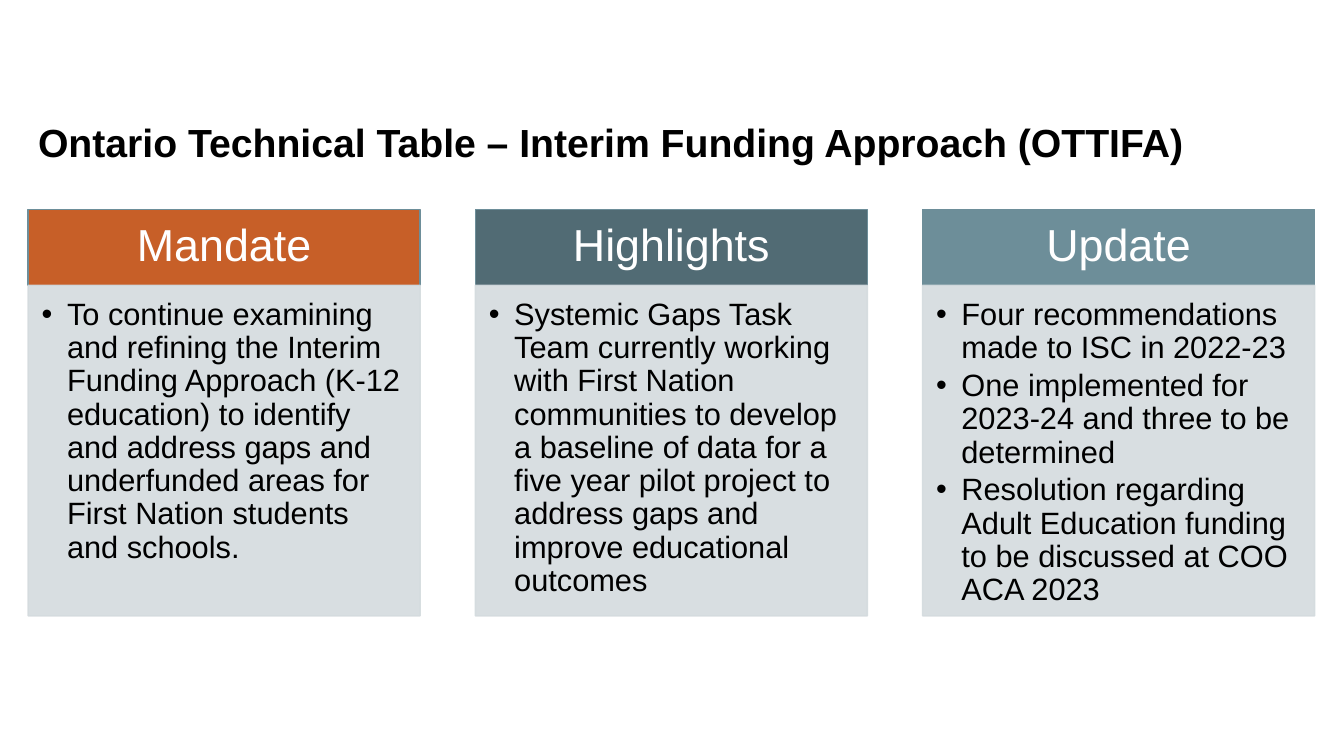
from dataclasses import dataclass

from lxml.etree import SubElement
from pptx import Presentation
from pptx.dml.color import RGBColor
from pptx.enum.shapes import MSO_SHAPE
from pptx.enum.text import MSO_ANCHOR, PP_ALIGN
from pptx.oxml.ns import qn
from pptx.util import Cm, Pt

# Grid, in centimetres
LEFT, STEP, WIDTH = 0.71, 11.27, 9.88
TOP, HEAD, BODY = 5.28, 1.91, 8.33

# Formats
TITLE_FONT = {"name": "Arial", "size": Pt(28), "bold": True}
HEAD_FONT = {"name": "Arial", "size": Pt(32), "bold": False}
BODY_FONT = {"name": "Arial", "size": Pt(22), "bold": False}
TITLE_PARA = {"line_spacing": 0.9, "alignment": PP_ALIGN.LEFT}
HEAD_PARA = {"line_spacing": 0.9, "alignment": PP_ALIGN.CENTER}
BODY_PARA = {**TITLE_PARA, "space_after": Pt(3.3)}
TITLE_FRAME = {"word_wrap": True, "vertical_anchor": MSO_ANCHOR.TOP}
HEAD_FRAME = {
    "word_wrap": True, "vertical_anchor": MSO_ANCHOR.MIDDLE,
    "margin_left": Cm(0.64), "margin_right": Cm(0.64),
    "margin_top": Cm(0.36), "margin_bottom": Cm(0.36),
}
BODY_FRAME = {
    "word_wrap": True, "vertical_anchor": MSO_ANCHOR.TOP,
    "margin_left": Cm(0.34), "margin_right": Cm(0.43),
    "margin_top": Cm(0.34), "margin_bottom": Cm(0.48),
}


@dataclass
class Column:
    head: str
    color: str
    points: list[str]


COLUMNS = [
    Column("Mandate", "C75F28", [
        "To continue examining and refining the Interim Funding Approach "
        "(K-12 education) to identify and address gaps and underfunded "
        "areas for First Nation students and schools.",
    ]),
    Column("Highlights", "516B74", [
        "Systemic Gaps Task Team currently working with First Nation "
        "communities to develop a baseline of data for a five year pilot "
        "project to address gaps and improve educational outcomes",
    ]),
    Column("Update", "6D8E99", [
        "Four recommendations made to ISC in 2022-23",
        "One implemented for 2023-24 and three to be determined",
        "Resolution regarding Adult Education funding to be discussed "
        "at COO ACA 2023",
    ]),
]


def paint(target, color: str) -> None:
    target.rgb = RGBColor.from_string(color)


def apply(target, values: dict) -> None:
    for name, value in values.items():
        setattr(target, name, value)


def add_dot(para) -> None:
    props = para._p.get_or_add_pPr()
    props.set("marL", str(Cm(0.64)))
    props.set("indent", str(-Cm(0.64)))
    SubElement(props, qn("a:buFont"), typeface="Arial")
    SubElement(props, qn("a:buChar"), char="•")


def write(frame, lines: list[str], color: str, box: dict, form: dict,
          font: dict, dots: bool = False) -> None:
    apply(frame, box)
    for i, line in enumerate(lines):
        para = frame.paragraphs[0] if i == 0 else frame.add_paragraph()
        if dots:
            add_dot(para)
        apply(para, form)
        run = para.add_run()
        run.text = line
        apply(run.font, font)
        paint(run.font.color, color)


def add_rect(slide, x: float, y: float, high: float, fill: str, edge: str,
             alpha: int = 100):
    rect = slide.shapes.add_shape(
        MSO_SHAPE.RECTANGLE, Cm(x), Cm(y), Cm(WIDTH), Cm(high))
    rect.shadow.inherit = False
    rect.fill.solid()
    paint(rect.fill.fore_color, fill)
    rect.line.width = Pt(1)
    paint(rect.line.color, edge)
    if alpha < 100:
        for tint in rect._element.spPr.iter(qn("a:srgbClr")):
            SubElement(tint, qn("a:alpha"), val=str(alpha * 1000))
    return rect


def add_column(slide, x: float, col: Column) -> None:
    head = add_rect(slide, x, TOP, HEAD, col.color, "6D8E99")
    write(head.text_frame, [col.head], "FFFFFF",
          HEAD_FRAME, HEAD_PARA, HEAD_FONT)
    body = add_rect(slide, x, TOP + HEAD, BODY, "D4DBDE", "D4DBDE", 90)
    write(body.text_frame, col.points, "000000",
          BODY_FRAME, BODY_PARA, BODY_FONT, dots=True)


def main() -> None:
    deck = Presentation()
    deck.slide_width, deck.slide_height = Cm(33.87), Cm(19.05)
    slide = deck.slides.add_slide(deck.slide_layouts[6])

    # Title
    title = slide.shapes.add_textbox(Cm(LEFT), Cm(3), Cm(32.05), Cm(2.16))
    write(title.text_frame,
          ["Ontario Technical Table – Interim Funding Approach (OTTIFA)"],
          "000000", TITLE_FRAME, TITLE_PARA, TITLE_FONT)

    # Columns
    for i, col in enumerate(COLUMNS):
        add_column(slide, LEFT + i * STEP, col)

    deck.save("out.pptx")


if __name__ == "__main__":
    main()
